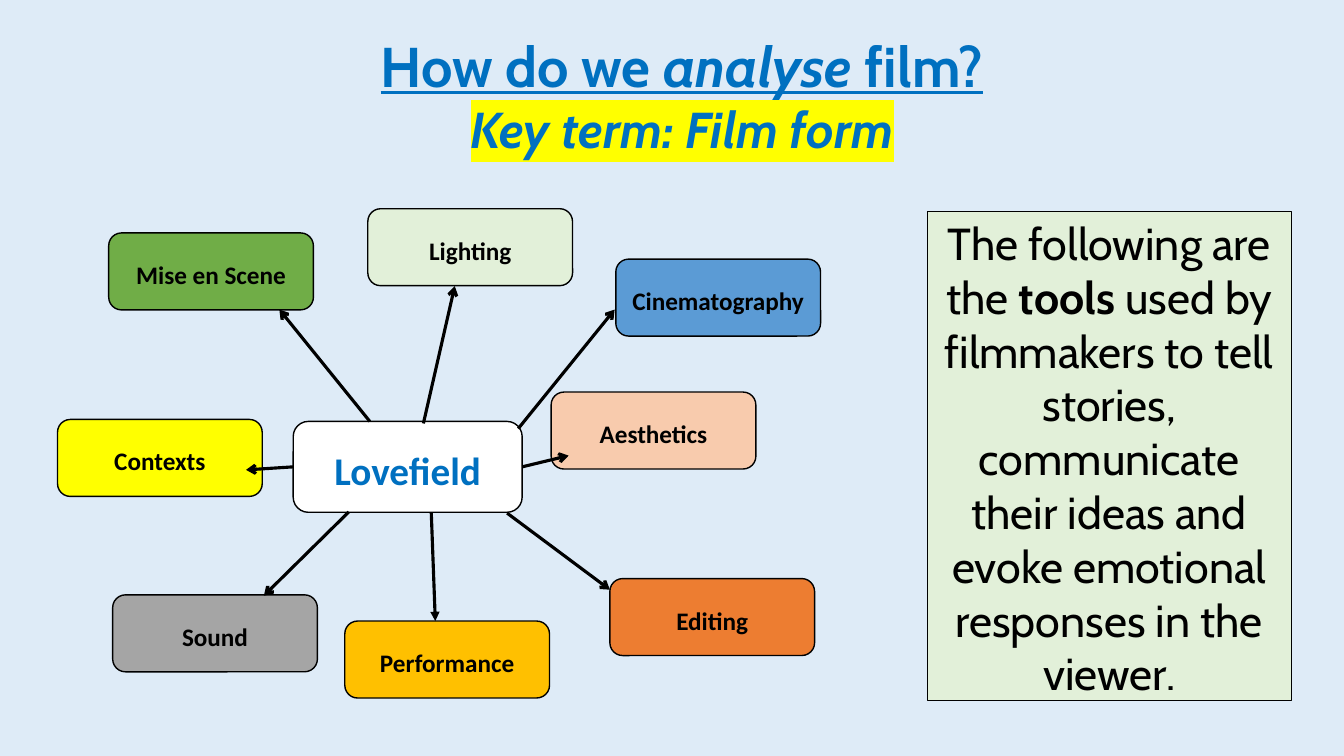
import pptx
import pptx.dml.color
import pptx.enum.shapes
import pptx.enum.text
import pptx.oxml.xmlchemy
import pptx.util

Cm = pptx.util.Cm
Pt = pptx.util.Pt
SHAPES = pptx.enum.shapes.MSO_SHAPE
ANCHORS = pptx.enum.text.MSO_ANCHOR

BLACK, BLUE, YELLOW, PALE_GREEN = "000000", "0070C0", "FFFF00", "E2F0D9"
NODE_WIDTH, NODE_HEIGHT = 5.16, 1.94
HUB = (7.39, 10.62, 5.77, 2.29)
RIGHT_SIDE, LEFT_SIDE = 3, 1

# label, fill, left and top of the node, arrow start, arrow end, joined hub side
TOOLS = [
    ("Mise en Scene", "70AD47", (2.74, 5.87), (9.32, 10.62), (7.04, 7.8), None),
    ("Lighting", PALE_GREEN, (9.27, 5.26), (10.67, 10.67), (11.46, 7.21), None),
    ("Cinematography", "5B9BD5", (15.52, 6.53), (13.06, 10.8), (15.49, 7.8), None),
    ("Aesthetics", "F8CBAD", (13.89, 9.88), (13.16, 11.76), (14.33, 11.48), RIGHT_SIDE),
    ("Editing", "ED7D31", (15.37, 14.58), (12.78, 12.93), (15.37, 14.86), None),
    ("Performance", "FFC000", (8.69, 15.65), (10.87, 12.93), (10.97, 15.65), None),
    ("Sound", "A5A5A5", (2.84, 14.99), (8.79, 12.9), (6.65, 15.01), None),
    ("Contexts", YELLOW, (1.45, 10.57), (7.39, 11.76), (6.2, 11.84), LEFT_SIDE),
]


def color(value):
    return pptx.dml.color.RGBColor.from_string(value)


def add_xml(parent, tag, **attributes):
    element = pptx.oxml.xmlchemy.OxmlElement(tag)
    for name, value in attributes.items():
        element.set(name, value)
    parent.append(element)
    return element


class Board:
    """The slide being built and its shared style."""

    def __init__(self, slide):
        self.slide = slide
        self.heading_font = "Cabin"
        self.label_font = "Calibri"
        background = slide.background.fill
        background.solid()
        background.fore_color.rgb = color("DEEBF7")

    def run(self, paragraph, text, size, font, ink, bold=False, italic=False,
            underline=False, highlight=None):
        run = paragraph.add_run()
        run.text = text
        run.font.size = Pt(size)
        run.font.bold = bold
        run.font.italic = italic
        run.font.underline = underline
        run.font.color.rgb = color(ink)
        if highlight:
            marker = add_xml(run._r.get_or_add_rPr(), "a:highlight")
            add_xml(marker, "a:srgbClr", val=highlight)
        run.font.name = font

    def frame(self, shape, anchor, insets):
        """Prepare the text area and return its centred first paragraph."""
        frame = shape.text_frame
        frame.word_wrap = True
        frame.vertical_anchor = anchor
        (frame.margin_left, frame.margin_top,
         frame.margin_right, frame.margin_bottom) = [Cm(inset) for inset in insets]
        return self.centre(frame.paragraphs[0])

    def centre(self, paragraph):
        paragraph.alignment = pptx.enum.text.PP_ALIGN.CENTER
        return paragraph

    def box(self, kind, bounds, fill, line_width):
        shape = self.slide.shapes.add_shape(kind, *[Cm(length) for length in bounds])
        shape.shadow.inherit = False
        shape.fill.solid()
        shape.fill.fore_color.rgb = color(fill)
        shape.line.color.rgb = color(BLACK)
        shape.line.width = Pt(line_width)
        return shape

    def node(self, label, bounds, fill, size=18, ink=BLACK):
        shape = self.box(SHAPES.ROUNDED_RECTANGLE, bounds, fill, 1)
        paragraph = self.frame(shape, ANCHORS.MIDDLE, (0.1, 0.15, 0.1, 0))
        self.run(paragraph, label, size, self.label_font, ink, bold=True)
        return shape

    def arrow(self, start, end, hub, side, head):
        connector = self.slide.shapes.add_connector(
            pptx.enum.shapes.MSO_CONNECTOR.STRAIGHT,
            *[Cm(length) for length in start + end])
        if side is not None:
            connector.begin_connect(hub, side)
        connector.line.color.rgb = color(BLACK)
        connector.line.width = Pt(2.25)
        add_xml(connector.get_or_add_ln(), "a:tailEnd", type=head)
        add_xml(connector._element.spPr, "a:effectLst")

    def title(self):
        shape = self.slide.shapes.add_textbox(Cm(9.25), Cm(0.66), Cm(15.88), Cm(3.5))
        question = self.frame(shape, ANCHORS.TOP, (0.25, 0.13, 0.25, 0.13))
        for text, italic in [("How do we ", False), ("analyse", True), (" film?", False)]:
            self.run(question, text, 40, self.heading_font, BLUE, bold=True,
                     italic=italic, underline=True)
        key_term = self.centre(shape.text_frame.add_paragraph())
        self.run(key_term, "Key term: Film form", 36, self.heading_font, BLUE,
                 bold=True, italic=True, highlight=YELLOW)

    def explanation(self):
        shape = self.box(SHAPES.RECTANGLE, (23.37, 5.34, 9.17, 12.31), PALE_GREEN, 0.75)
        paragraph = self.frame(shape, ANCHORS.TOP, (0.18, 0.1, 0.18, 0.1))
        for text, bold in [
            ("The following are the ", False),
            ("tools", True),
            (" used by filmmakers to tell stories, communicate their ideas and "
             "evoke emotional responses in the viewer.", False),
        ]:
            self.run(paragraph, text, 32, self.heading_font, BLACK, bold=bold)

    def mind_map(self):
        hub = self.node("Lovefield", HUB, "FFFFFF", size=28, ink=BLUE)
        for label, fill, corner, *_ in TOOLS:
            self.node(label, corner + (NODE_WIDTH, NODE_HEIGHT), fill)
        for label, _, _, start, end, side in TOOLS:
            head = "triangle" if label == "Performance" else "arrow"
            self.arrow(start, end, hub, side, head)


def main():
    presentation = pptx.Presentation()
    presentation.slide_width = Cm(33.87)
    presentation.slide_height = Cm(19.05)
    board = Board(presentation.slides.add_slide(presentation.slide_layouts[6]))
    board.title()
    board.explanation()
    board.mind_map()
    presentation.save("out.pptx")


if __name__ == "__main__":
    main()
